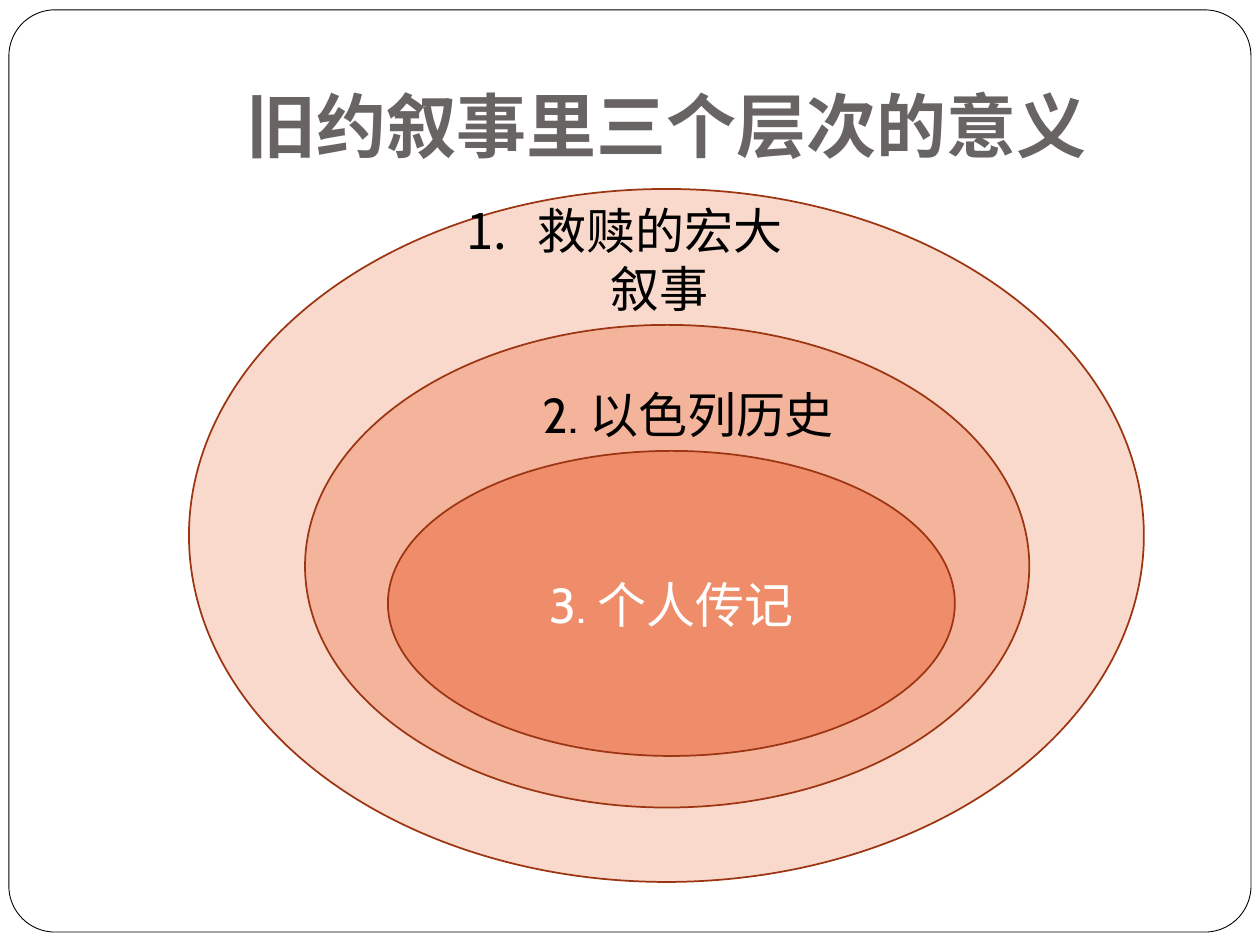
from lxml import etree
from pptx import Presentation
from pptx.dml.color import RGBColor
from pptx.enum.shapes import MSO_SHAPE
from pptx.enum.text import MSO_ANCHOR, PP_ALIGN
from pptx.oxml.ns import qn
from pptx.util import Cm, Pt

ELLIPSE = MSO_SHAPE.OVAL
ROUNDED = MSO_SHAPE.ROUNDED_RECTANGLE
CENTER = PP_ALIGN.CENTER
MIDDLE = MSO_ANCHOR.MIDDLE
BOTTOM = MSO_ANCHOR.BOTTOM

FONT = "Cabin"
COLORS = {
    "white": "FFFFFF",
    "black": "000000",
    "title": "696464",
    "outline": "9C3511",
    "outer": "FAD9CD",
    "middle": "F4B39B",
    "inner": "EF8C6A",
}


def add_filled_shape(kind, box, fill, line, line_width):
    shape = slide.shapes.add_shape(kind, *[Cm(value) for value in box])
    shape.shadow.inherit = False
    shape.fill.solid()
    shape.fill.fore_color.rgb = RGBColor.from_string(COLORS[fill])
    shape.line.color.rgb = RGBColor.from_string(COLORS[line])
    shape.line.width = Pt(line_width)
    return shape


def set_text(shape, text, size, color, bold=False):
    text_frame = shape.text_frame
    text_frame.word_wrap = True
    text_frame.text = text
    paragraph = text_frame.paragraphs[0]
    paragraph.alignment = CENTER
    font = paragraph.runs[0].font
    font.name = FONT
    font.size = Pt(size)
    font.bold = bold
    font.color.rgb = RGBColor.from_string(COLORS[color])
    return paragraph


presentation = Presentation()
presentation.slide_width = Cm(25.4)
presentation.slide_height = Cm(19.05)
slide = presentation.slides.add_slide(presentation.slide_layouts[5])

# Page frame, placed behind the title
frame = add_filled_shape(ROUNDED, (0.18, 0.2, 25.04, 18.59), "white", "black", 0.5)
frame.adjustments[0] = 0.05
slide.shapes._spTree.insert(2, frame._element)

# Title
title = slide.shapes.title
title.left, title.top, title.width, title.height = Cm(2.74), Cm(0.64), Cm(21.39), Cm(2.97)
set_text(title, "旧约叙事里三个层次的意义", 40, "title", bold=True)
title.text_frame.vertical_anchor = BOTTOM
title.text_frame.margin_bottom = Cm(0.25)

# Nested ellipses, from the outermost level inwards
levels = [
    ("outer", (3.81, 3.81, 19.25, 13.97)),
    ("middle", (6.15, 6.55, 14.6, 9.73)),
    ("inner", (7.82, 9.09, 11.43, 6.15)),
]
for level, box in levels:
    ellipse = add_filled_shape(ELLIPSE, box, level, "outline", 1)

# The innermost ellipse carries its own label
set_text(ellipse, "3. 个人传记", 28, "white")
ellipse.text_frame.vertical_anchor = MIDDLE

# Labels of the two outer levels
labels = [
    ("救赎的宏大叙事", (9.09, 3.91, 6.99, 2.64), True),
    ("2. 以色列历史", (9.53, 7.62, 8.69, 1.45), False),
]
for text, box, numbered in labels:
    label = slide.shapes.add_textbox(*[Cm(value) for value in box])
    paragraph = set_text(label, text, 28, "black")
    if numbered:
        properties = paragraph._p.get_or_add_pPr()
        properties.set("marL", str(Cm(1.43)))
        properties.set("indent", str(-Cm(1.43)))
        etree.SubElement(properties, qn("a:buFont"), typeface="+mj-lt")
        etree.SubElement(properties, qn("a:buAutoNum"), type="arabicPeriod")

presentation.save("out.pptx")
